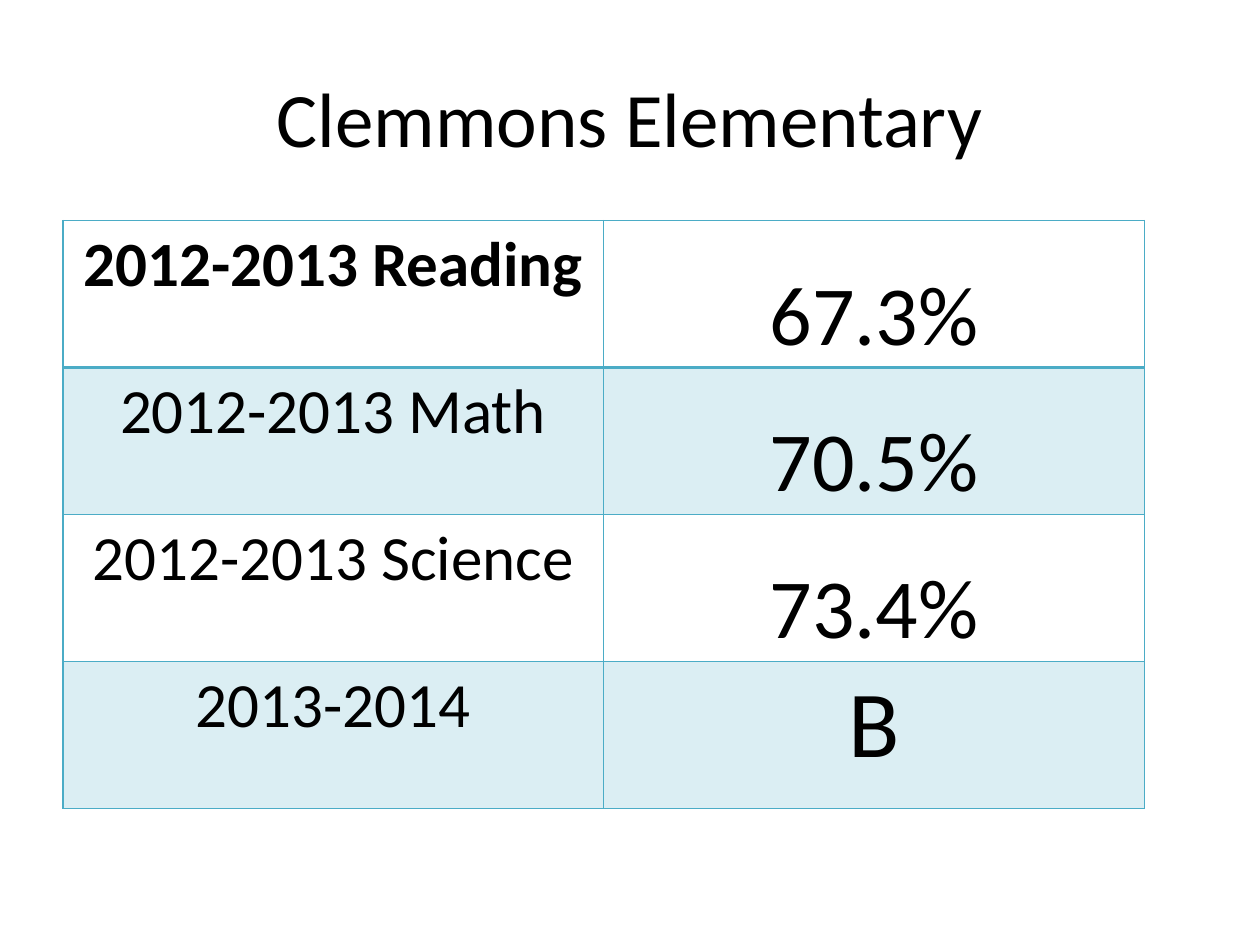
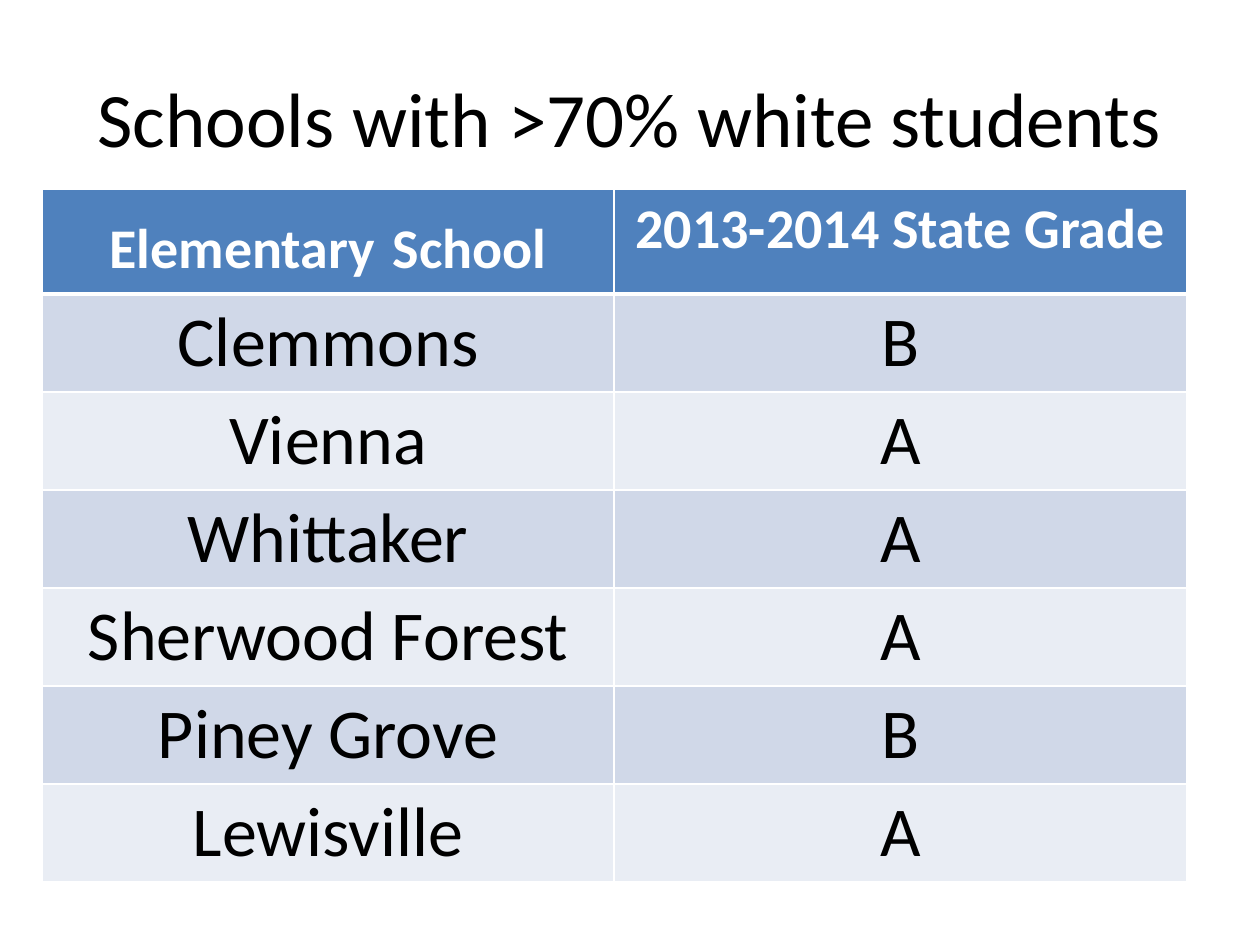
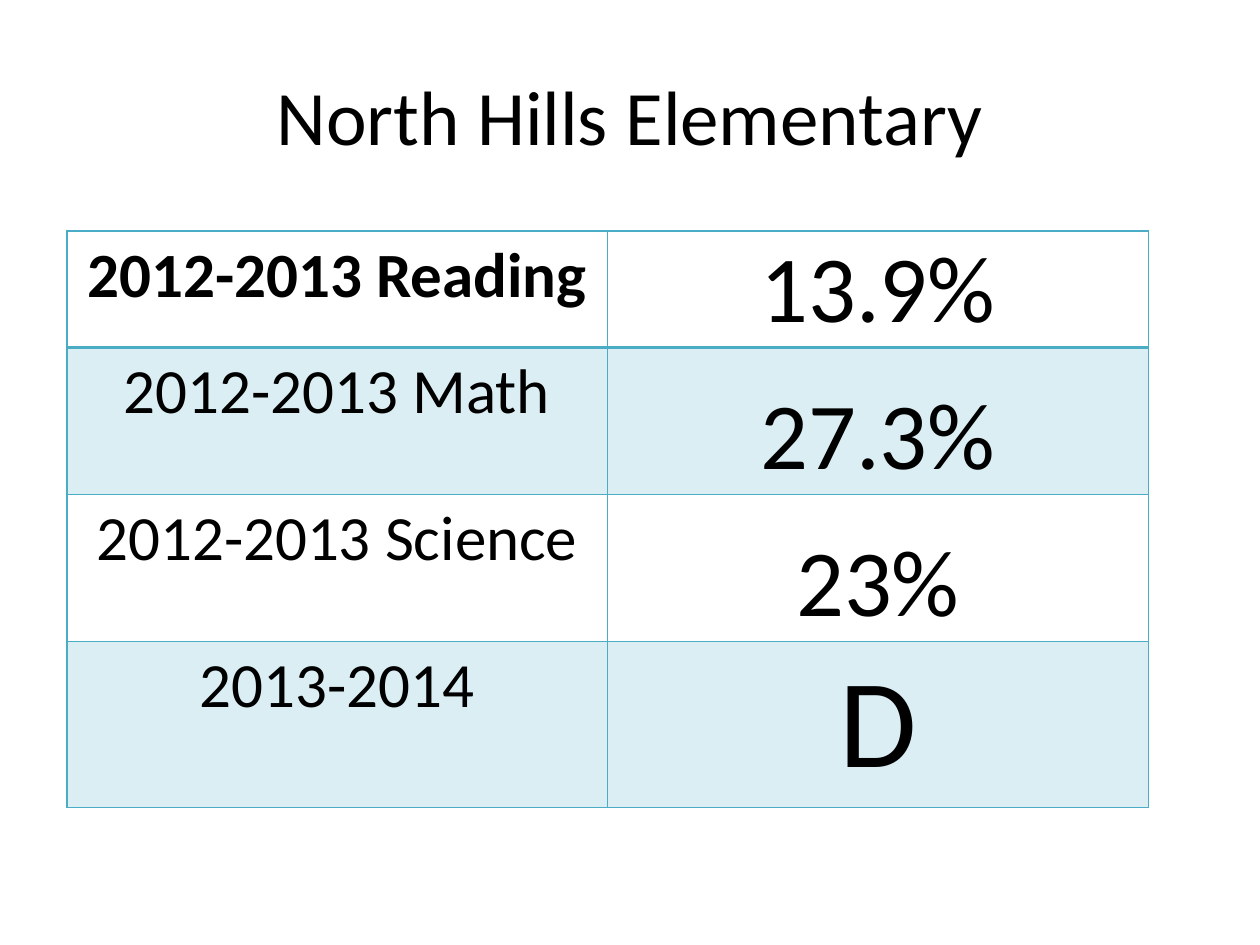
from lxml.etree import SubElement
from pptx import Presentation
from pptx.dml.color import RGBColor
from pptx.enum.text import MSO_ANCHOR, PP_ALIGN
from pptx.oxml.ns import qn
from pptx.util import Pt

COLORS = {
    "text": "000000",
    "white": "FFFFFF",
    "teal": "4BACC6",
    "header": "4F81BD",
    "band_dark": "D0D8E8",
    "band_light": "E9EDF4",
}


class Deck:
    font = "Calibri"

    def __init__(self):
        self.prs = Presentation()
        self.prs.slide_width, self.prs.slide_height = Pt(720), Pt(540)
        self.s = None

    def slide(self, title, top=21.6):
        self.s = self.prs.slides.add_slide(self.prs.slide_layouts[6])
        sp = self.s.shapes.add_textbox(Pt(36), Pt(top), Pt(648), Pt(90))
        tf = sp.text_frame
        tf.word_wrap = True
        tf.vertical_anchor = MSO_ANCHOR.MIDDLE
        tf.text = title
        self.format(tf, 44)

    def format(self, tf, size, color="text", bold=False):
        p = tf.paragraphs[0]
        p.alignment = PP_ALIGN.CENTER
        for r in p.runs:
            r.font.name = self.font
            r.font.size = Pt(size)
            r.font.bold = bold
            r.font.color.rgb = RGBColor.from_string(COLORS[color])

    def table(self, left, top, col_width, row_heights):
        shape = self.s.shapes.add_table(
            len(row_heights), 2, Pt(left), Pt(top),
            Pt(2 * col_width), Pt(sum(row_heights)))
        table = shape.table
        table.first_row = table.horz_banding = False
        for column in table.columns:
            column.width = Pt(col_width)
        for row, height in zip(table.rows, row_heights):
            row.height = Pt(height)
        return table

    def borders(self, cell, color, top=1, bottom=1):
        tcPr = cell._tc.get_or_add_tcPr()
        for side, width in (("L", 1), ("R", 1), ("T", top), ("B", bottom)):
            ln = SubElement(tcPr, qn(f"a:ln{side}"), w=str(Pt(width)))
            fill = SubElement(ln, qn("a:solidFill"))
            SubElement(fill, qn("a:srgbClr"), val=COLORS[color])

    def fill(self, cell, color=None, alpha=100):
        """Fill the cell, or leave it clear; alpha is opacity in percent."""
        if color is None:
            cell.fill.background()
            return
        cell.fill.solid()
        cell.fill.fore_color.rgb = RGBColor.from_string(COLORS[color])
        if alpha < 100:
            clr = cell._tc.tcPr.find(f"{qn('a:solidFill')}/{qn('a:srgbClr')}")
            SubElement(clr, qn("a:alpha"), val=str(alpha * 1000))

    def score_table(self, left, top, row_heights, scores, score_size, grade_size):
        """Test scores by subject, with the state grade in the last row."""
        labels = ["2012-2013 Reading", "2012-2013 Math",
                  "2012-2013 Science", "2013-2014"]
        table = self.table(left, top, 309, row_heights)
        for i, row in enumerate(zip(labels, scores)):
            is_grade = i == len(labels) - 1
            for j, text in enumerate(row):
                cell = table.cell(i, j)
                self.borders(cell, "teal", 2 if i == 1 else 1, 2 if i == 0 else 1)
                self.fill(cell, "teal" if i % 2 else None, 20)
                cell.text_frame.text = text
                if j == 0:
                    self.format(cell.text_frame, 36, bold=i == 0)
                elif is_grade:
                    self.format(cell.text_frame, grade_size)
                else:
                    self.format(cell.text_frame, score_size)
                    cell.vertical_anchor = MSO_ANCHOR.BOTTOM
                    cell.margin_left = cell.margin_right = cell.margin_top = Pt(0.72)
                    cell.margin_bottom = Pt(0)

    def grade_table(self, left, top, header, grades):
        table = self.table(left, top, 327, [60] + [56] * len(grades))
        for i, row in enumerate([header] + grades):
            for j, text in enumerate(row):
                cell = table.cell(i, j)
                self.borders(cell, "white", 3 if i == 1 else 1, 3 if i == 0 else 1)
                cell.text_frame.text = text
                if i == 0:
                    self.fill(cell, "header")
                    self.format(cell.text_frame, 32, "white", True)
                else:
                    self.fill(cell, "band_dark" if i % 2 else "band_light")
                    self.format(cell.text_frame, 40)
        return table

    def widen_space(self, cell, size):
        """Set the space between the cell's two words in a larger size."""
        p = cell.text_frame.paragraphs[0]
        first, last = p.text.split()
        p.runs[0].text = first
        for text in (" ", last):
            p.add_run().text = text
        self.format(cell.text_frame, 32, "white", True)
        p.runs[1].font.size = Pt(size)


def main():
    deck = Deck()

    deck.slide("Clemmons Elementary")
    deck.score_table(36, 126, [84] * 4, ["67.3%", "70.5%", "73.4%", "B"], 48, 54)

    deck.slide("Schools with >70% white students")
    table = deck.grade_table(
        24, 108, ("Elementary School", "2013-2014 State Grade"),
        [("Clemmons", "B"), ("Vienna", "A"), ("Whittaker", "A"),
         ("Sherwood Forest", "A"), ("Piney Grove", "B"), ("Lewisville", "A")])
    deck.widen_space(table.cell(0, 0), 44)

    deck.slide("North Hills Elementary", 20.8)
    deck.score_table(38.2, 132, [66.6, 84, 84, 95],
                     ["13.9%", "27.3%", "23%", "D"], 54, 72)

    deck.prs.save("out.pptx")


if __name__ == "__main__":
    main()
